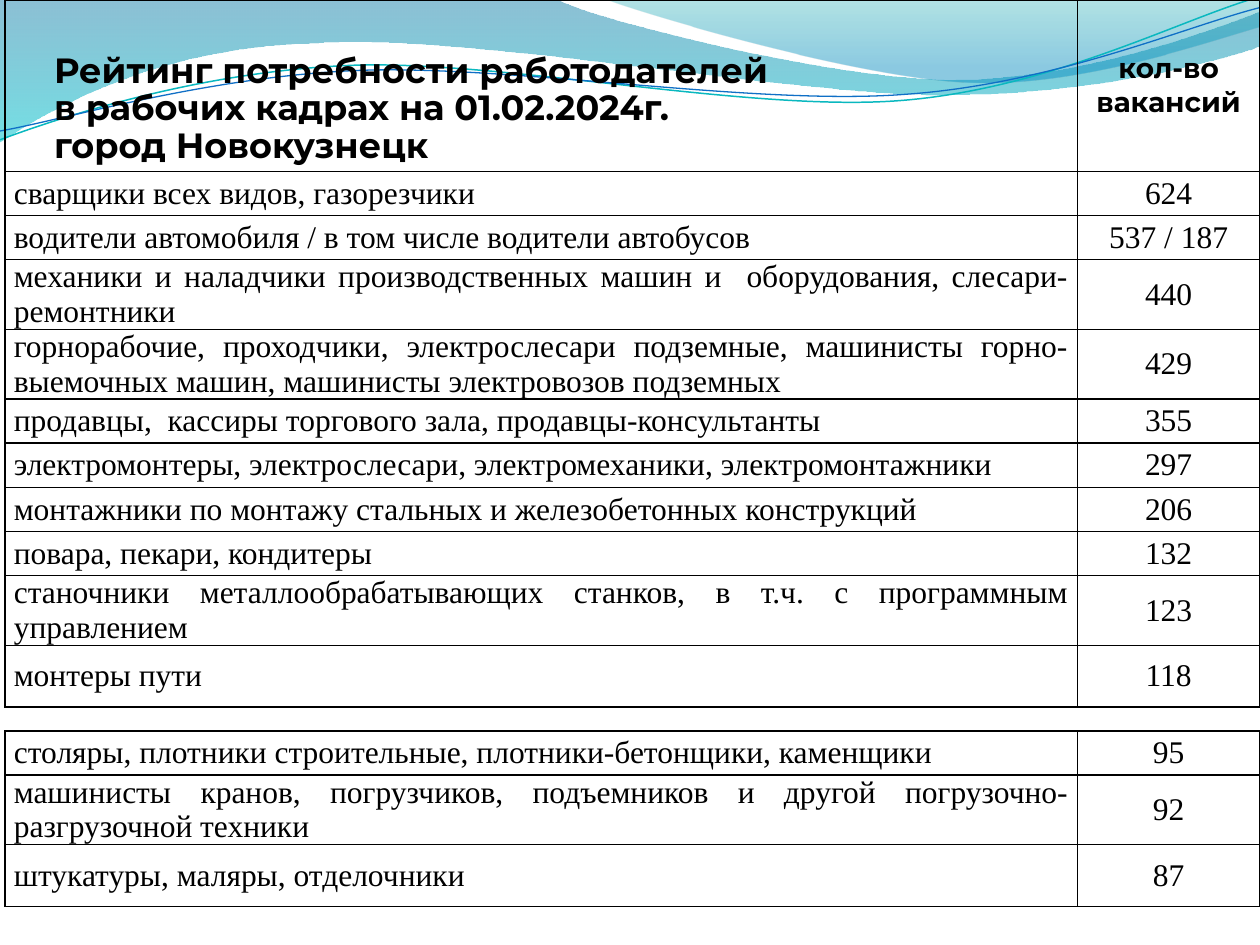
from lxml.etree import SubElement
from pptx import Presentation
from pptx.dml.color import RGBColor
from pptx.enum.text import MSO_ANCHOR as Anchor, MSO_AUTO_SIZE as AutoSize, PP_ALIGN as Align
from pptx.oxml.ns import qn
from pptx.util import Inches, Pt

BLACK = RGBColor(0x00, 0x00, 0x00)
DEEP_BLUE = RGBColor(0x00, 0x74, 0xA1)
AQUA = RGBColor(0x00, 0xC6, 0xCF)
TEAL = RGBColor(0x00, 0xA1, 0xA9)
SKY = RGBColor(0x00, 0x8B, 0xBF)
CYAN_LINE = RGBColor(0x0A, 0xB8, 0xBF)
BLUE_LINE = RGBColor(0x0F, 0x6F, 0xC6)

HEADING = {"name": "Montserrat", "bold": True}
BODY = {"name": "Times New Roman", "size": Pt(18), "bold": False}
COLUMNS = (8.51, 1.45)
ONE_LINE, TWO_LINES, LAST = 0.35, 0.55, 0.49

TITLE = (
    "Рейтинг потребности работодателей",
    "в рабочих кадрах на 01.02.2024г.",
    "город Новокузнецк",
)
MAIN_ROWS = (
    ("сварщики всех видов, газорезчики", "624", ONE_LINE),
    ("водители автомобиля / в том числе водители автобусов", "537 / 187", ONE_LINE),
    ("механики и наладчики производственных машин и  оборудования, слесари-ремонтники",
     "440", TWO_LINES),
    ("горнорабочие, проходчики, электрослесари подземные, машинисты горно-выемочных машин, "
     "машинисты электровозов подземных", "429", TWO_LINES),
    ("продавцы,  кассиры торгового зала, продавцы-консультанты", "355", ONE_LINE),
    ("электромонтеры, электрослесари, электромеханики, электромонтажники", "297", ONE_LINE),
    ("монтажники по монтажу стальных и железобетонных конструкций", "206", ONE_LINE),
    ("повара, пекари, кондитеры", "132", ONE_LINE),
    ("станочники металлообрабатывающих станков, в т.ч. с программным управлением",
     "123", TWO_LINES),
    ("монтеры пути", "118", LAST),
)
EXTRA_ROWS = (
    ("столяры, плотники строительные, плотники-бетонщики, каменщики", "95", ONE_LINE),
    ("машинисты кранов, погрузчиков, подъемников и другой погрузочно-разгрузочной техники",
     "92", TWO_LINES),
    ("штукатуры, маляры, отделочники", "87", LAST),
)

# A pair is a straight step; six numbers are a Bezier step (two controls, end).
UPPER_WAVE = (
    (0, 0), (4.4, -0.01), (4.76, 0.17, 6.64, 0.63, 7.58, 0.63),
    (8.53, 0.63, 9.58, 0.26, 10, 0.09), (10.01, 0.36),
    (9.83, 0.44, 8.7, 0.76, 7.46, 0.75), (6.22, 0.75, 3.82, 0.28, 2.57, 0.34),
    (1.29, 0.36, 0.46, 0.83, -0.01, 1.13), (0, 0),
)
RIGHT_WAVE = (
    (4.79, -0.01), (5.09, 0.11, 6.82, 0.62, 7.69, 0.65),
    (8.56, 0.69, 9.61, 0.32, 10, 0.21), (10, 0), (4.79, -0.01),
)
CYAN_CURVE = (
    (0, 1.11), (0.48, 0.93, 1.58, 0.57, 2.77, 0.52),
    (3.95, 0.47, 5.93, 0.89, 7.13, 0.8), (8.33, 0.71, 9.38, 0.15, 9.98, -0.02),
)
BLUE_CURVE = (
    (0, 1.04), (0.47, 0.96, 1.64, 0.61, 2.83, 0.56),
    (4.03, 0.51, 5.97, 0.84, 7.17, 0.75), (8.36, 0.67, 9.41, 0.21, 10, 0.06),
)


def apply_format(target, values):
    for name, value in values.items():
        setattr(target, name, value)


def draw_outline(page, steps, close):
    """Draw the steps' end points, then bend the Bezier steps into true curves."""
    steps = [[Inches(value) for value in step] for step in steps]
    builder = page.shapes.build_freeform(*steps[0])
    builder.add_line_segments([step[-2:] for step in steps[1:]], close=close)
    shape = builder.convert_to_shape()
    shape.shadow.inherit = False
    segments = list(shape.element.spPr.iter(qn("a:lnTo")))
    for segment, step in zip(segments, steps[1:]):
        if len(step) == 2:
            continue
        curve = segment.makeelement(qn("a:cubicBezTo"), {})
        for x, y in zip(step[::2], step[1::2]):
            SubElement(curve, qn("a:pt"), x=str(x - shape.left), y=str(y - shape.top))
        segment.getparent().replace(segment, curve)
    return shape


def add_wave(page, steps, stops):
    """Add a filled wave; stops hold position, colour and opacity in percent."""
    wave = draw_outline(page, steps, True)
    wave.line.fill.background()
    wave.fill.gradient()
    wave.fill.gradient_angle = 270
    for stop, (position, color, _) in zip(wave.fill.gradient_stops, stops):
        stop.position = position
        stop.color.rgb = color
    colors = list(wave.element.spPr.iter(qn("a:srgbClr")))
    for node, (_, _, opacity) in zip(colors, stops):
        SubElement(node, qn("a:alpha"), val=str(opacity * 1000))


def add_curve(page, steps, color, width):
    curve = draw_outline(page, steps, False)
    curve.fill.background()
    curve.line.color.rgb = color
    curve.line.width = Pt(width)


def add_backdrop(page):
    add_wave(page, UPPER_WAVE, ((0, DEEP_BLUE, 45), (1, AQUA, 55)))
    add_wave(page, RIGHT_WAVE, ((0, TEAL, 30), (0.8, SKY, 45)))
    add_curve(page, CYAN_CURVE, CYAN_LINE, 0.85)
    add_curve(page, BLUE_CURVE, BLUE_LINE, 0.75)


def add_borders(cell):
    props = cell._tc.get_or_add_tcPr()
    for index, side in enumerate(("lnL", "lnR", "lnT", "lnB")):
        border = props.makeelement(qn(f"a:{side}"), {"w": str(Pt(1))})
        fill = SubElement(border, qn("a:solidFill"))
        SubElement(fill, qn("a:srgbClr"), val=str(BLACK))
        props.insert(index, border)


def fill_cell(cell, text, align, font):
    cell.fill.background()
    add_borders(cell)
    apply_format(cell, {
        "vertical_anchor": Anchor.MIDDLE, "margin_left": Inches(0.07),
        "margin_right": Inches(0.07), "margin_top": 0, "margin_bottom": 0})
    cell.text = text
    para = cell.text_frame.paragraphs[0]
    para.alignment = align
    apply_format(para.font, font)
    para.font.color.rgb = BLACK


def add_vacancies(page, left, top, rows, header=None):
    """Add a table of jobs and counts; header is a first row in the heading font."""
    all_rows = ((header,) if header else ()) + rows
    height = sum(row[2] for row in all_rows)
    table = page.shapes.add_table(len(all_rows), len(COLUMNS), Inches(left), Inches(top),
                                  Inches(sum(COLUMNS)), Inches(height)).table
    apply_format(table, {"first_row": False, "horz_banding": False})
    for column, width in zip(table.columns, COLUMNS):
        column.width = Inches(width)
    for index, (job, count, row_height) in enumerate(all_rows):
        table.rows[index].height = Inches(row_height)
        is_header = header and index == 0
        font = {**HEADING, "size": Pt(16)} if is_header else BODY
        fill_cell(table.cell(index, 0), job, Align.JUSTIFY, font)
        fill_cell(table.cell(index, 1), count, Align.CENTER, font)


def place_title(page, left, top, width, height):
    title = page.shapes.title
    title.element.getparent().append(title.element)
    apply_format(title, {"left": Inches(left), "top": Inches(top),
                         "width": Inches(width), "height": Inches(height)})
    frame = title.text_frame
    apply_format(frame, {
        "margin_left": 0, "margin_right": 0, "margin_top": 0, "margin_bottom": 0,
        "word_wrap": True, "auto_size": AutoSize.NONE, "vertical_anchor": Anchor.MIDDLE})
    frame.text = "\n".join(TITLE)
    for para in frame.paragraphs:
        apply_format(para, {"alignment": Align.LEFT, "line_spacing": 0.9})
        apply_format(para.font, {**HEADING, "size": Pt(20)})
        para.font.color.rgb = BLACK


def main():
    deck = Presentation()
    deck.slide_width, deck.slide_height = Inches(10), Inches(7.5)
    page = deck.slides.add_slide(deck.slide_layouts[5])
    add_backdrop(page)
    add_vacancies(page, 0.04, 0, MAIN_ROWS, header=("", "кол-во вакансий", 1.36))
    place_title(page, 0.43, 0.41, 8, 0.92)
    add_vacancies(page, 0.04, 5.8, EXTRA_ROWS)
    deck.save("out.pptx")


if __name__ == "__main__":
    main()
